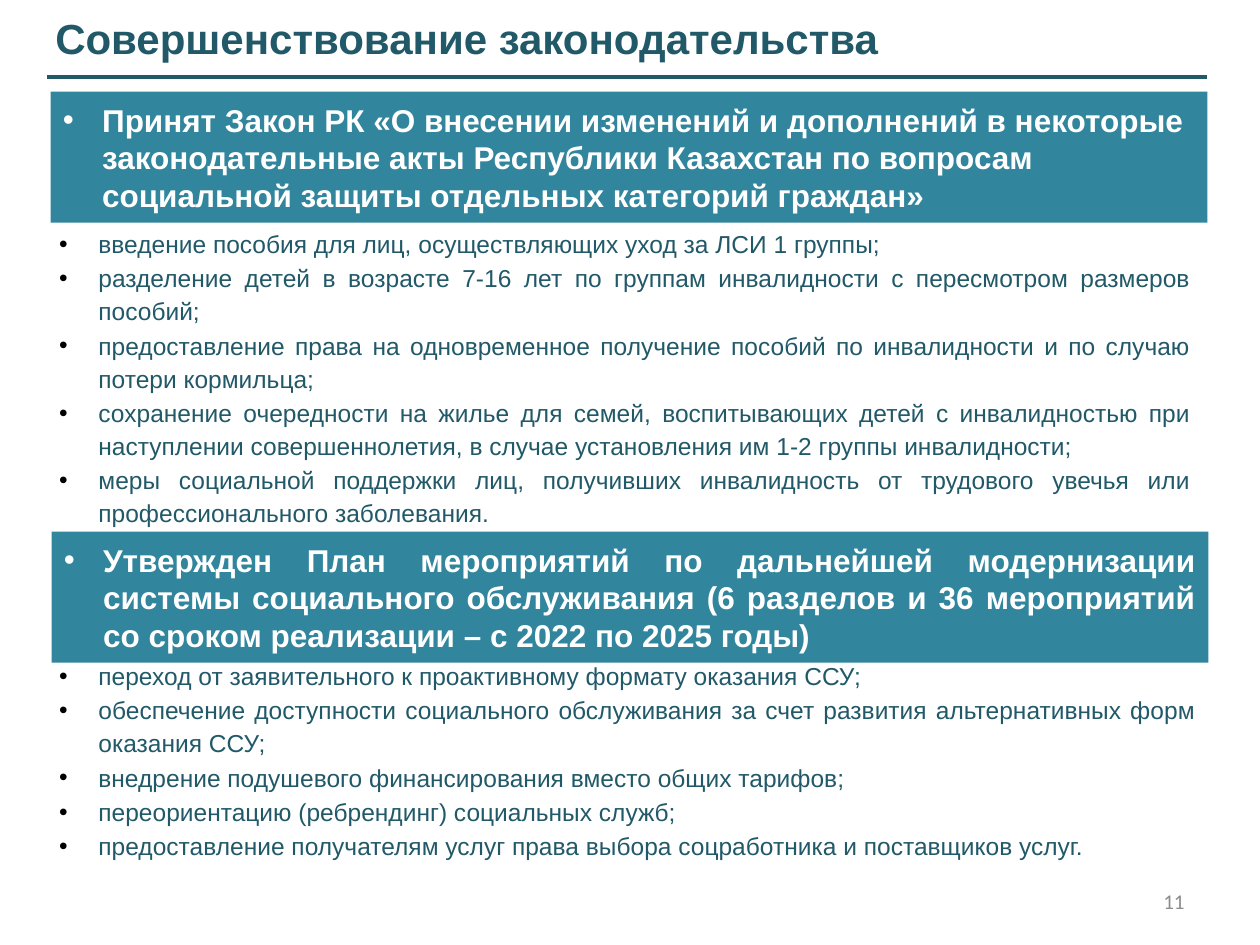
from lxml.etree import SubElement
from pptx import Presentation
from pptx.dml.color import RGBColor
from pptx.enum.shapes import MSO_CONNECTOR, MSO_SHAPE
from pptx.enum.text import MSO_ANCHOR, MSO_AUTO_SIZE, PP_ALIGN
from pptx.oxml.ns import qn
from pptx.util import Cm, Pt

DARK_TEAL = "215968"
TEAL = "31859C"
WHITE = "FFFFFF"
BLACK = "000000"
GREY = "8C8C8C"
INDENT = 0.79
LEFT = 0.94

TITLE = "Совершенствование законодательства"
LAW = ("Принят Закон РК «О внесении изменений и дополнений в некоторые "
       "законодательные акты Республики Казахстан по вопросам социальной "
       "защиты отдельных категорий граждан»")
LAW_MEASURES = [
    "введение пособия для лиц, осуществляющих уход за ЛСИ 1 группы;",
    "разделение детей в возрасте 7-16 лет по группам инвалидности с "
    "пересмотром размеров пособий;",
    "предоставление права на одновременное получение пособий по "
    "инвалидности и по случаю потери кормильца;",
    "сохранение очередности на жилье для семей, воспитывающих детей с "
    "инвалидностью при наступлении совершеннолетия, в случае установления "
    "им 1-2 группы инвалидности;",
    "меры социальной поддержки лиц, получивших инвалидность от трудового "
    "увечья или профессионального заболевания.",
]
PLAN = ("Утвержден План мероприятий по дальнейшей модернизации системы "
        "социального обслуживания (6 разделов и 36 мероприятий со сроком "
        "реализации – с 2022 по 2025 годы)")
PLAN_MEASURES = [
    "переход от заявительного к проактивному формату оказания ССУ;",
    "обеспечение доступности социального обслуживания за счет развития "
    "альтернативных форм оказания ССУ;",
    "внедрение подушевого финансирования вместо общих тарифов;",
    "переориентацию (ребрендинг) социальных служб;",
    "предоставление получателям услуг права выбора соцработника и "
    "поставщиков услуг.",
]


def color(hex_string):
    return RGBColor.from_string(hex_string)


def place(shape, box):
    shape.left, shape.top, shape.width, shape.height = map(Cm, box)


def format_paragraph(paragraph, size, hex_string, alignment,
                     bold=False, font_name="Arial"):
    paragraph.alignment = alignment
    for run in paragraph.runs:
        run.font.size = Pt(size)
        run.font.name = font_name
        run.font.bold = bold
        run.font.color.rgb = color(hex_string)


def add_bullet(paragraph, hex_string):
    """Give the paragraph a hanging indent and a coloured round bullet."""
    properties = paragraph._p.get_or_add_pPr()
    properties.set("marL", str(Cm(INDENT)))
    properties.set("indent", str(-Cm(INDENT)))
    bullet_color = SubElement(properties, qn("a:buClr"))
    SubElement(bullet_color, qn("a:srgbClr"), val=hex_string)
    SubElement(properties, qn("a:buFont"), typeface="Arial")
    SubElement(properties, qn("a:buChar"), char="•")


def fill_title(title, box):
    place(title, box)
    text_frame = title.text_frame
    text_frame.text = TITLE
    text_frame.word_wrap = False
    text_frame.auto_size = MSO_AUTO_SIZE.NONE
    text_frame.vertical_anchor = MSO_ANCHOR.TOP
    format_paragraph(text_frame.paragraphs[0], 24, DARK_TEAL,
                     PP_ALIGN.LEFT, bold=True)


def add_title_rule(slide, left, top, width):
    rule = slide.shapes.add_connector(MSO_CONNECTOR.STRAIGHT, Cm(left), Cm(top),
                                      Cm(left + width), Cm(top))
    rule.line.color.rgb = color(DARK_TEAL)
    rule.line.width = Pt(2.25)
    SubElement(rule._element.spPr, qn("a:effectLst"))


def add_banner(slide, box, text, alignment):
    banner = slide.shapes.add_shape(MSO_SHAPE.RECTANGLE, *map(Cm, box))
    banner.shadow.inherit = False
    banner.fill.solid()
    banner.fill.fore_color.rgb = color(TEAL)
    banner.line.fill.background()
    text_frame = banner.text_frame
    text_frame.text = text
    text_frame.word_wrap = True
    text_frame.vertical_anchor = MSO_ANCHOR.MIDDLE
    paragraph = text_frame.paragraphs[0]
    format_paragraph(paragraph, 18, WHITE, alignment, bold=True)
    add_bullet(paragraph, WHITE)


def fill_measures(body, box, measures):
    place(body, box)
    text_frame = body.text_frame
    text_frame.text = "\n".join(measures)
    text_frame.word_wrap = True
    text_frame.auto_size = MSO_AUTO_SIZE.NONE
    text_frame.vertical_anchor = MSO_ANCHOR.TOP
    for paragraph in text_frame.paragraphs:
        format_paragraph(paragraph, 14, DARK_TEAL, PP_ALIGN.JUSTIFY)
        paragraph.line_spacing = 1.12
        paragraph.space_before = Pt(0)
        paragraph.space_after = Pt(0.8)
        add_bullet(paragraph, BLACK)


def add_slide_number(slide, box, number):
    text_frame = slide.shapes.add_textbox(*map(Cm, box)).text_frame
    text_frame.text = str(number)
    text_frame.word_wrap = True
    text_frame.vertical_anchor = MSO_ANCHOR.MIDDLE
    format_paragraph(text_frame.paragraphs[0], 12, GREY, PP_ALIGN.RIGHT,
                     font_name="Calibri")


def build_legislation_slide(presentation):
    slide = presentation.slides.add_slide(presentation.slide_layouts[3])
    title, law_body, plan_body = slide.placeholders
    fill_title(title, (0.86, 0.13, 17.27, 1.27))
    add_title_rule(slide, LEFT, 1.55, 23.39)
    add_banner(slide, (1.02, 1.85, 23.32, 2.64), LAW, PP_ALIGN.LEFT)
    fill_measures(law_body, (LEFT, 4.42, 23.32, 6.48), LAW_MEASURES)
    add_banner(slide, (1.04, 10.72, 23.32, 2.64), PLAN, PP_ALIGN.JUSTIFY)
    fill_measures(plan_body, (LEFT, 13.13, 23.42, 4.62), PLAN_MEASURES)
    add_slide_number(slide, (18.21, 17.65, 5.92, 1.02), 11)


def main():
    presentation = Presentation()
    presentation.slide_width = Cm(25.4)
    presentation.slide_height = Cm(19.05)
    build_legislation_slide(presentation)
    presentation.save("out.pptx")


if __name__ == "__main__":
    main()
